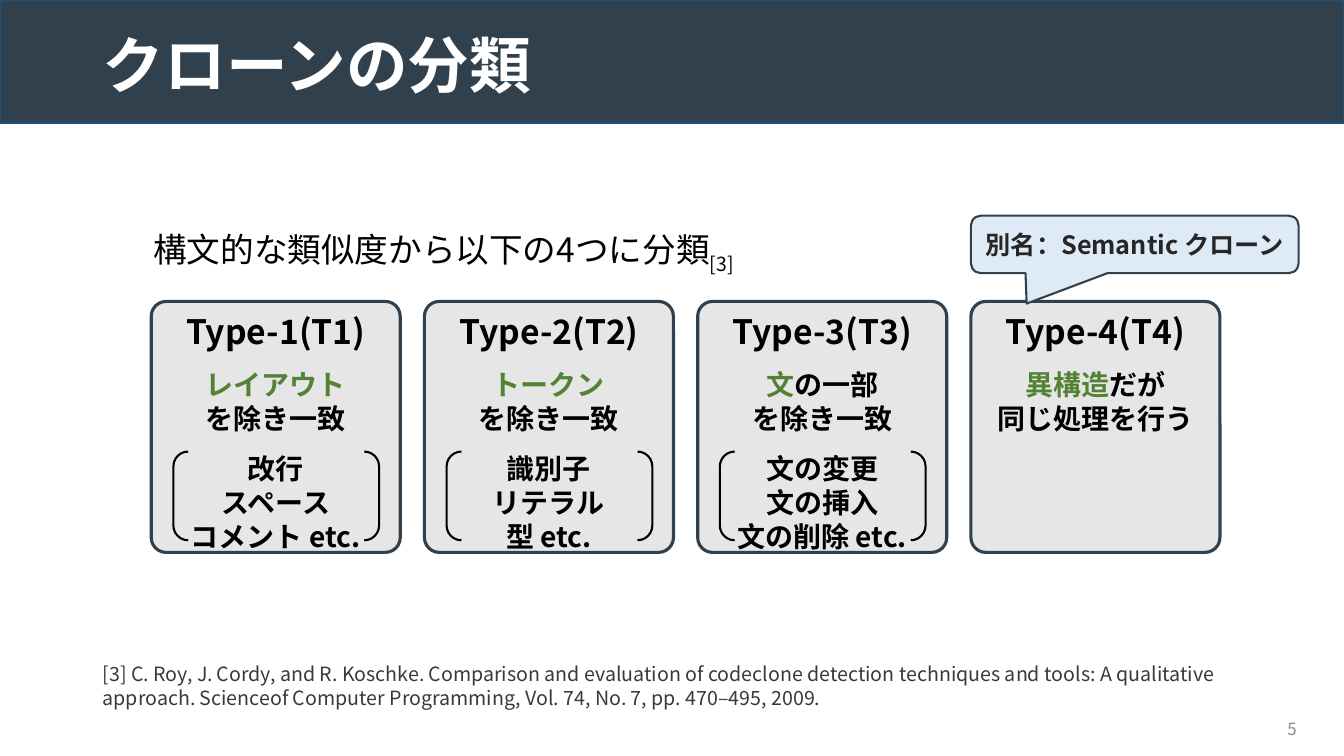
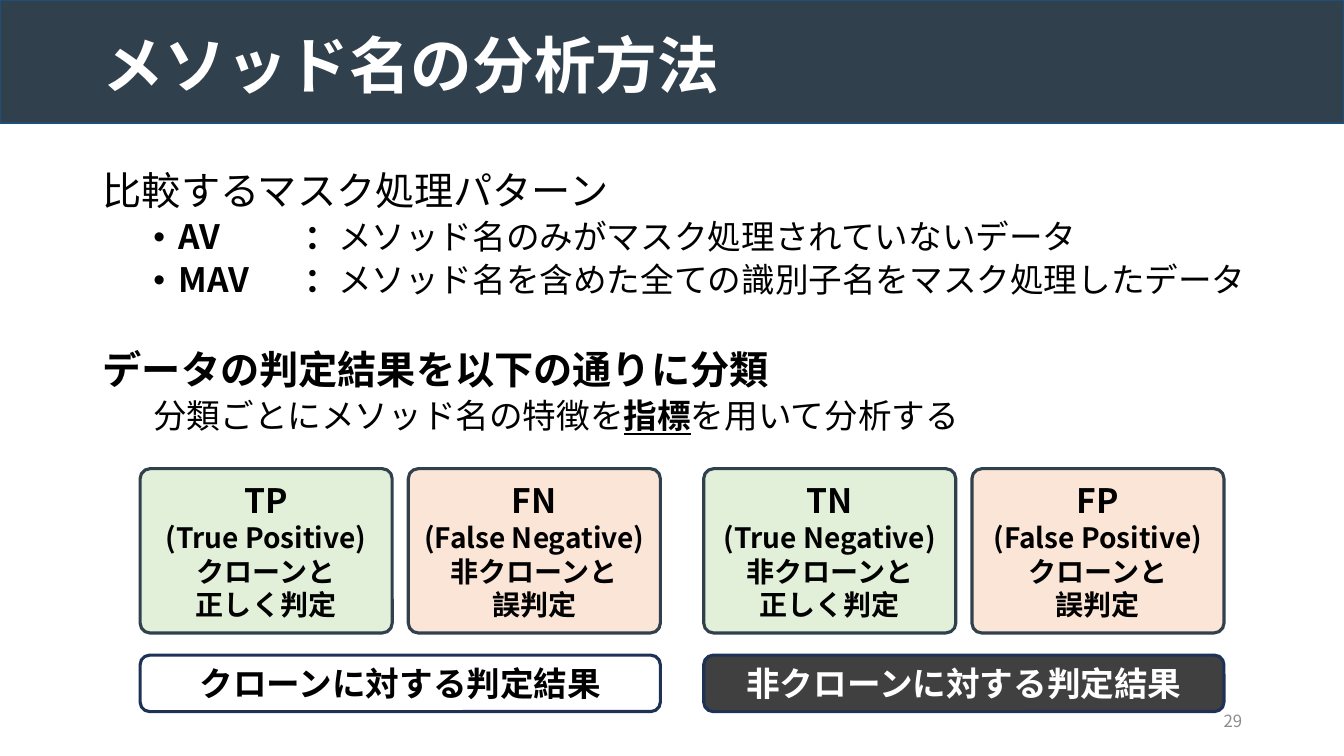
"""Build two slides on code clone types and method name analysis."""
from dataclasses import dataclass

from lxml import etree
from pptx import Presentation
from pptx.dml.color import RGBColor
from pptx.enum.shapes import MSO_SHAPE
from pptx.enum.text import MSO_ANCHOR, MSO_AUTO_SIZE, PP_ALIGN
from pptx.oxml.ns import qn
from pptx.util import Inches, Pt

RECT, ROUND = MSO_SHAPE.RECTANGLE, MSO_SHAPE.ROUNDED_RECTANGLE
BRACKETS, CALLOUT = MSO_SHAPE.DOUBLE_BRACKET, MSO_SHAPE.ROUNDED_RECTANGULAR_CALLOUT
TOP, MIDDLE, BOTTOM = MSO_ANCHOR.TOP, MSO_ANCHOR.MIDDLE, MSO_ANCHOR.BOTTOM
LEFT, CENTER, RIGHT = PP_ALIGN.LEFT, PP_ALIGN.CENTER, PP_ALIGN.RIGHT


@dataclass(frozen=True)
class Theme:
    font: str = "Noto Sans CJK JP"
    title_font: str = "Arial"
    slate: str = "31404D"
    band_line: str = "1F4E79"
    navy: str = "1E3256"
    black: str = "000000"
    white: str = "FFFFFF"
    dark: str = "404040"
    ink: str = "262626"
    note: str = "3B3838"
    grey: str = "8C8C8C"
    card: str = "E7E6E6"
    accent: str = "548235"
    blue: str = "DEEBF7"
    green: str = "E2F0D9"
    orange: str = "FBE5D6"
    title: int = 44
    lead: int = 28
    head: int = 24
    body: int = 20
    label: int = 18
    source: int = 14
    number: int = 12


T = Theme()
BOLD = {"bold": True}
ACCENT = {"color": T.accent}

CLONE_TITLE = "クローンの分類"
CLONE_LEAD = [{"runs": [("構文的な類似度から以下の4つに分類", {}), ("[3]", {"baseline": -25000})],
               "indent": (0.5, 0)}]
ALIAS = "別名：Semantic クローン"
CITATION = ("[3] C. Roy, J. Cordy, and R. Koschke. Comparison and evaluation of codeclone "
            "detection techniques and tools: A qualitative approach. Scienceof Computer "
            "Programming, Vol. 74, No. 7, pp. 470–495, 2009.")
CLONE_TYPES = [
    ("Type-1(T1)", "レイアウト", "", "を除き一致", ["改行", "スペース", "コメント etc."]),
    ("Type-2(T2)", "トークン", "", "を除き一致", ["識別子", "リテラル", "型 etc."]),
    ("Type-3(T3)", "文", "の一部", "を除き一致", ["文の変更", "文の挿入", "文の削除 etc."]),
    ("Type-4(T4)", "異構造", "だが", "同じ処理を行う", []),
]

METHOD_TITLE = "メソッド名の分析方法"
PATTERN = {"indent": (0.75, -0.25), "before": 5, "bullet": "•", "tab": 2}
METHOD_BODY = [
    {"runs": [("比較するマスク処理パターン", {"size": T.lead})], "before": 10},
    {"runs": [("AV\t：", BOLD), ("メソッド名のみがマスク処理されていないデータ", {})], **PATTERN},
    {"runs": [("MAV\t：", BOLD), ("メソッド名を含めた全ての識別子名をマスク処理したデータ", {})],
     **PATTERN},
    {"runs": [("データの判定結果を以下の通りに分類", {"size": T.lead, "bold": True})], "before": 36},
    {"runs": [("分類ごとにメソッド名の特徴を", {}), ("指標", {"bold": True, "underline": True}),
              ("を用いて分析する", {})], "indent": (0.5, 0), "before": 5},
]
RESULT_GROUPS = [
    ("クローンに対する判定結果", None, T.black,
     [("TP", "(True Positive)", "クローンと", "正しく判定", T.green),
      ("FN", "(False Negative)", "非クローンと", "誤判定", T.orange)]),
    ("非クローンに対する判定結果", T.dark, T.white,
     [("TN", "(True Negative)", "非クローンと", "正しく判定", T.green),
      ("FP", "(False Positive)", "クローンと", "誤判定", T.orange)]),
]


def place(sp, x, y, w, h):
    sp.left, sp.top, sp.width, sp.height = (Inches(v) for v in (x, y, w, h))


def add_run(p, text, size, color, font, bold=False, underline=False, baseline=0):
    r = p.add_run()
    r.text = text
    f = r.font
    f.size, f.bold, f.underline, f.name = Pt(size), bold, underline, font
    f.color.rgb = RGBColor.from_string(color)
    r_pr = f._element
    latin = r_pr.find(qn("a:latin"))
    east = etree.Element(qn("a:ea"), typeface=T.font)
    latin.addnext(east)
    if baseline:
        r_pr.set("baseline", str(baseline))


def write(sp, paras, size=T.body, color=T.black, font=T.font, bold=False,
          align=CENTER, anchor=MIDDLE, spacing=1.0):
    """Fill a shape with paragraphs given as strings or dicts of runs."""
    tf = sp.text_frame
    tf.word_wrap, tf.auto_size, tf.vertical_anchor = True, MSO_AUTO_SIZE.NONE, anchor
    for i, para in enumerate(paras):
        if isinstance(para, str):
            para = {"runs": [(para, {})]}
        p = tf.paragraphs[0] if i == 0 else tf.add_paragraph()
        p.alignment, p.line_spacing = align, spacing
        p.space_before, p.space_after = Pt(para.get("before", 0)), Pt(0)
        p_pr = p._p.get_or_add_pPr()
        margin, first = para.get("indent", (0, 0))
        p_pr.set("marL", str(Inches(margin)))
        p_pr.set("indent", str(Inches(first)))
        if "bullet" in para:
            etree.SubElement(p_pr, qn("a:buFont"), typeface=T.title_font)
            etree.SubElement(p_pr, qn("a:buChar"), char=para["bullet"])
        else:
            etree.SubElement(p_pr, qn("a:buNone"))
        if "tab" in para:
            tabs = etree.SubElement(p_pr, qn("a:tabLst"))
            etree.SubElement(tabs, qn("a:tab"), pos=str(Inches(para["tab"])), algn="l")
        for text, extra in para["runs"]:
            add_run(p, text, **{"size": size, "color": color, "font": font,
                                "bold": bold, **extra})


def add_box(s, kind, box, fill=None, line=T.slate, width=2.25, adj=()):
    sp = s.shapes.add_shape(kind, *(Inches(v) for v in box))
    sp.shadow.inherit = False
    if fill:
        sp.fill.solid()
        sp.fill.fore_color.rgb = RGBColor.from_string(fill)
    else:
        sp.fill.background()
    sp.line.color.rgb = RGBColor.from_string(line)
    sp.line.width = Pt(width)
    for i, value in enumerate(adj):
        sp.adjustments[i] = value
    return sp


def add_label(s, box, text, **fmt):
    sp = s.shapes.add_textbox(*(Inches(v) for v in box))
    write(sp, [text], **fmt)


def add_slide(prs, title, body, body_box, number, number_at, **fmt):
    s = prs.slides.add_slide(prs.slide_layouts[1])
    band = add_box(s, RECT, (0, 0, 13.33, 1.22), T.slate, T.band_line, 1)
    s.shapes.title._element.addprevious(band._element)
    place(s.shapes.title, 0.92, 0.18, 11.5, 0.88)
    write(s.shapes.title, [title], size=T.title, color=T.white, font=T.title_font,
          bold=True, align=LEFT, anchor=BOTTOM, spacing=0.9)
    place(s.placeholders[1], *body_box)
    write(s.placeholders[1], body, size=T.head, align=LEFT, **fmt)
    add_label(s, (*number_at, 3, 0.4), number, size=T.number, color=T.grey, align=RIGHT)
    return s


def build_clone_types(prs):
    s = add_slide(prs, CLONE_TITLE, CLONE_LEAD, (0.92, 2.2, 11.64, 0.6), "5", (9.96, 7.03))
    left, top, width, height, pitch = 1.5, 2.99, 2.47, 2.49, 2.71
    for i, (name, key, rest, second, examples) in enumerate(CLONE_TYPES):
        x = left + i * pitch
        card = add_box(s, ROUND, (x, top, width, height), T.card, adj=[0.06])
        first = [(key, ACCENT)] + ([(rest, {})] if rest else [])
        paras = [{"runs": [(name, {"size": T.head})]},
                 {"runs": first, "before": 12}, second]
        if examples:
            paras += [{"runs": [(examples[0], {})], "before": 12}, *examples[1:]]
            add_box(s, BRACKETS, (x + 0.22, 4.48, 2.04, 0.88), line=T.black, width=1.5)
        write(card, paras, bold=True, anchor=TOP)
    add_label(s, (0.92, 6.52, 11.5, 0.57), CITATION, size=T.source, color=T.note,
              align=LEFT, anchor=TOP)
    callout = add_box(s, CALLOUT, (left + 3 * pitch, 2.14, 3.25, 0.57), T.blue,
                      width=1.5, adj=[-0.33, 1.03, 0.17])
    write(callout, [ALIAS], size=T.label, color=T.ink, bold=True)


def build_method_analysis(prs):
    s = add_slide(prs, METHOD_TITLE, METHOD_BODY, (0.92, 1.65, 12.41, 2.9), "29",
                  (9.42, 6.95), anchor=TOP, spacing=0.9)
    left, width, pitch, group_pitch = 1.39, 2.5, 2.66, 5.59
    for g, (label, fill, color, results) in enumerate(RESULT_GROUPS):
        x = left + g * group_pitch
        for i, (short, *lines, tint) in enumerate(results):
            sp = add_box(s, ROUND, (x + i * pitch, 4.65, width, 1.63), tint, adj=[0.06])
            write(sp, [{"runs": [(short, {"size": T.head})]}, *lines], bold=True)
        bar = add_box(s, ROUND, (x, 6.5, pitch + width, 0.56), fill, T.navy)
        write(bar, [label], size=T.head, color=color, bold=True)


def main():
    prs = Presentation()
    prs.slide_width, prs.slide_height = Inches(13.33), Inches(7.5)
    build_clone_types(prs)
    build_method_analysis(prs)
    prs.save("out.pptx")


if __name__ == "__main__":
    main()
